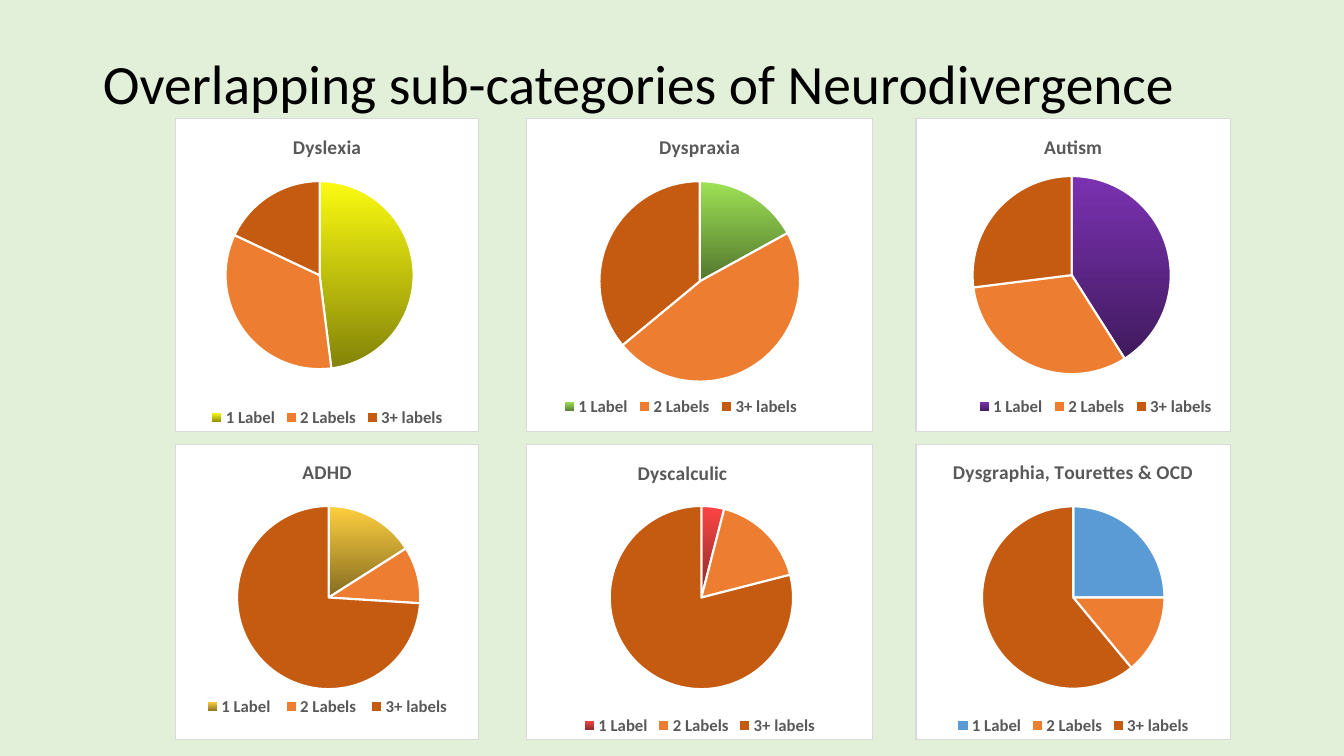
from dataclasses import dataclass
from typing import Optional

from lxml import etree
from pptx import Presentation
from pptx.chart import data as cd
from pptx.dml.color import RGBColor
from pptx.enum import chart as ec, text
from pptx.oxml import ns, parse_xml
from pptx.util import Inches, Pt


@dataclass(frozen=True)
class Theme:
    font: str = "Calibri"
    back: str = "E2F0D9"
    ink: str = "000000"
    grey: str = "595959"
    card: str = "FFFFFF"
    edge: str = "D9D9D9"
    two: str = "ED7D31"
    three: str = "C55A11"
    head: float = 39.6
    name: float = 14
    key: float = 12


@dataclass(frozen=True)
class Pie:
    title: str
    vals: tuple
    fill: tuple                     # one colour, or top and bottom of a gradient
    plot: tuple                     # x, y, width, height as shares of the card
    key: Optional[tuple] = None     # legend box, if moved
    spot: Optional[tuple] = None    # title corner, if moved
    series: str = ""


THEME = Theme()
LABELS = ("1 Label", "2 Labels", "3+ labels")
COLS = ((1.74, 3.01), (5.22, 3.44), (9.08, 3.13))   # left, width
ROWS = ((1.17, 3.12), (4.4, 2.94))                  # top, height
PIES = (
    Pie("Dyslexia", (48, 34, 18), ("FBFB11", "838309"), (0.16, 0.2, 0.63, 0.6)),
    Pie("Dyspraxia", (17, 47, 36), ("9EE256", "52762D"), (0.21, 0.2, 0.58, 0.64),
        key=(0.09, 0.88, 0.71, 0.08)),
    Pie("Autism", (41, 32, 27), ("7B32B2", "401A5D"), (0.18, 0.18, 0.63, 0.64),
        key=(0.18, 0.88, 0.78, 0.08)),
    Pie("ADHD", (16, 10, 74), ("FECF40", "846C21"), (0.2, 0.21, 0.61, 0.62),
        key=(0.07, 0.85, 0.86, 0.08)),
    Pie("Dyscalculic", (4, 17, 79), ("FE4444", "832B2B"), (0.24, 0.21, 0.53, 0.62),
        spot=(0.31, 0.04)),
    Pie("Dysgraphia, Tourettes & OCD", (25, 14, 61), ("5B9BD5",),
        (0.21, 0.21, 0.58, 0.62), series="Series 1"),
)


def rgb(code: str) -> RGBColor:
    return RGBColor.from_string(code)


def style(font, size: float, code: str, bold: bool = False) -> None:
    font.name, font.size, font.bold = THEME.font, Pt(size), bold
    font.color.rgb = rgb(code)


def place(node, index: int, box: tuple, inner: bool = False) -> None:
    """Give a chart part a manual layout."""
    for old in node.findall(ns.qn("c:layout")):
        node.remove(old)
    layout = etree.Element(ns.qn("c:layout"))
    manual = etree.SubElement(layout, ns.qn("c:manualLayout"))
    rules = [("layoutTarget", "inner")] if inner else []
    rules += [("xMode", "edge"), ("yMode", "edge")]
    rules += list(zip("xywh", box))
    for tag, val in rules:
        etree.SubElement(manual, ns.qn("c:" + tag)).set("val", str(val))
    node.insert(index, layout)


def frame(chart) -> None:
    """Fill and outline the card behind a chart."""
    chart.element.chart.addnext(parse_xml(
        f'<c:spPr {ns.nsdecls("c", "a")}>'
        f'<a:solidFill><a:srgbClr val="{THEME.card}"/></a:solidFill>'
        f'<a:ln w="{Pt(0.75)}"><a:solidFill><a:srgbClr val="{THEME.edge}"/>'
        '</a:solidFill></a:ln></c:spPr>'))


def paint(point, fill: tuple) -> None:
    body = point.format.fill
    if len(fill) == 1:
        body.solid()
        body.fore_color.rgb = rgb(fill[0])
    else:
        body.gradient()
        body.gradient_angle = 270
        for stop, code, pos in zip(body.gradient_stops, fill, (0, 1)):
            stop.color.rgb, stop.position = rgb(code), pos
    point.format.line.color.rgb = rgb(THEME.card)
    point.format.line.width = Pt(1.5)


def draw(slide, pie: Pie, col: tuple, row: tuple) -> None:
    data = cd.CategoryChartData()
    data.categories = LABELS
    data.add_series(pie.series or pie.title, pie.vals)
    (left, width), (top, height) = col, row
    chart = slide.shapes.add_chart(
        ec.XL_CHART_TYPE.PIE, Inches(left), Inches(top),
        Inches(width), Inches(height), data).chart
    style(chart.font, 10, THEME.ink)
    frame(chart)

    # Title
    chart.has_title = True
    para = chart.chart_title.text_frame.paragraphs[0]
    para.text = pie.title
    style(para.font, THEME.name, THEME.grey, True)
    if pie.spot:
        place(chart.element.xpath("c:chart/c:title")[0], 1, pie.spot)

    # Legend
    chart.has_legend = True
    legend = chart.legend
    legend.position = ec.XL_LEGEND_POSITION.BOTTOM
    legend.include_in_layout = False
    style(legend.font, THEME.key, THEME.grey, True)
    if pie.key:
        place(chart.element.xpath("c:chart/c:legend")[0], 1, pie.key)

    # Slices
    place(chart.element.xpath("c:chart/c:plotArea")[0], 0, pie.plot, True)
    plot = chart.plots[0]
    plot.vary_by_categories = True
    fills = (pie.fill, (THEME.two,), (THEME.three,))
    for i, fill in enumerate(fills):
        paint(plot.series[0].points[i], fill)


def main() -> None:
    deck = Presentation()
    deck.slide_width, deck.slide_height = Inches(13.33), Inches(7.5)
    slide = deck.slides.add_slide(deck.slide_layouts[5])
    slide.background.fill.solid()
    slide.background.fill.fore_color.rgb = rgb(THEME.back)

    # Heading
    head = slide.shapes.title
    head.left, head.top = Inches(0.92), Inches(0.13)
    head.width, head.height = Inches(11.5), Inches(1.45)
    head.text_frame.text = "Overlapping sub-categories of Neurodivergence"
    head.text_frame.vertical_anchor = text.MSO_ANCHOR.MIDDLE
    para = head.text_frame.paragraphs[0]
    para.alignment, para.line_spacing = text.PP_ALIGN.LEFT, 0.9
    style(para.font, THEME.head, THEME.ink)

    # Grid of pies
    for i, pie in enumerate(PIES):
        row, col = divmod(i, len(COLS))
        draw(slide, pie, COLS[col], ROWS[row])

    deck.save("out.pptx")


if __name__ == "__main__":
    main()
